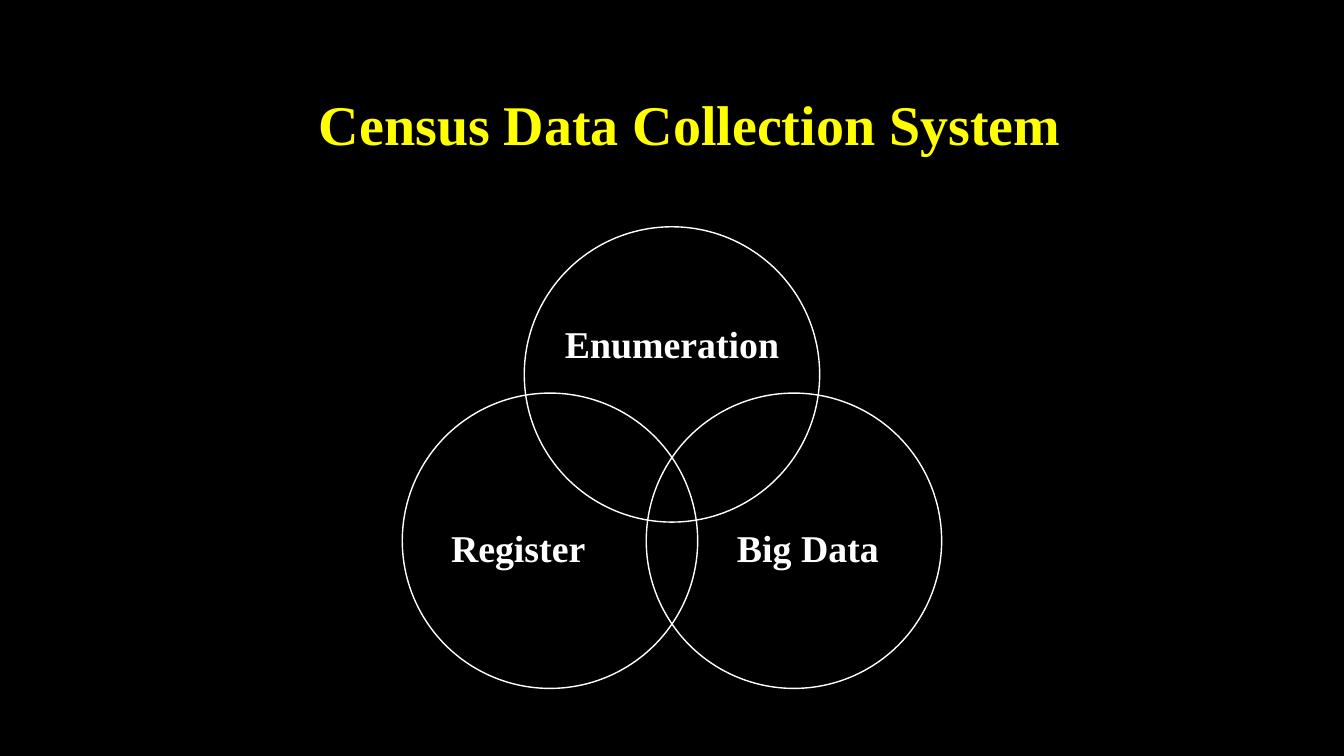
from dataclasses import dataclass

import pptx
import pptx.dml.color
import pptx.enum.shapes
import pptx.enum.text
import pptx.slide
import pptx.util

Inches = pptx.util.Inches
Align = pptx.enum.text.PP_ALIGN


@dataclass(frozen=True)
class Theme:
    font: str = "Times New Roman"
    background: str = "000000"
    title_color: str = "FFFF00"
    foreground: str = "FFFFFF"
    title_size: float = 40
    label_size: float = 27
    outline_width: float = 1


@dataclass(frozen=True)
class Box:
    left: float
    top: float
    width: float
    height: float

    def lengths(self) -> tuple[int, int, int, int]:
        return (Inches(self.left), Inches(self.top),
                Inches(self.width), Inches(self.height))


@dataclass(frozen=True)
class Label:
    text: str
    box: Box
    size: float
    color: str
    align: Align = Align.CENTER
    margin: float = 0
    line_spacing: float = 0.9


@dataclass(frozen=True)
class DataSource:
    circle_left: float
    circle_top: float
    label: Label


THEME = Theme()
DIAMETER = 2.93
CENTER_LEFT = 5.2
SIDE_OFFSET = 1.21
TOP_ROW = 2.25
BOTTOM_ROW = 3.9

TITLE = Label("Census Data Collection System", Box(2.34, 0.6, 9, 1.25),
              THEME.title_size, THEME.title_color, margin=0.1, line_spacing=1)


def source_label(text: str, box: Box, align: Align = Align.CENTER) -> Label:
    return Label(text, box, THEME.label_size, THEME.foreground, align)


SOURCES = [
    DataSource(CENTER_LEFT, TOP_ROW,
               source_label("Enumeration", Box(5.59, 2.77, 2.15, 1.32))),
    DataSource(CENTER_LEFT + SIDE_OFFSET, BOTTOM_ROW,
               source_label("Big Data", Box(7.31, 4.65, 1.76, 1.61), Align.LEFT)),
    DataSource(CENTER_LEFT - SIDE_OFFSET, BOTTOM_ROW,
               source_label("Register", Box(4.26, 4.65, 1.76, 1.61))),
]


def rgb(value: str) -> pptx.dml.color.RGBColor:
    return pptx.dml.color.RGBColor.from_string(value)


def draw_label(slide: pptx.slide.Slide, label: Label) -> None:
    frame = slide.shapes.add_textbox(*label.box.lengths()).text_frame
    frame.word_wrap = True
    frame.vertical_anchor = pptx.enum.text.MSO_ANCHOR.MIDDLE
    frame.margin_left = frame.margin_right = Inches(label.margin)
    frame.margin_top = frame.margin_bottom = Inches(label.margin / 2)
    paragraph = frame.paragraphs[0]
    paragraph.alignment = label.align
    paragraph.line_spacing = label.line_spacing
    run = paragraph.add_run()
    run.text = label.text
    run.font.name = THEME.font
    run.font.size = pptx.util.Pt(label.size)
    run.font.bold = True
    run.font.color.rgb = rgb(label.color)


def draw_source(slide: pptx.slide.Slide, source: DataSource) -> None:
    box = Box(source.circle_left, source.circle_top, DIAMETER, DIAMETER)
    circle = slide.shapes.add_shape(
        pptx.enum.shapes.MSO_SHAPE.OVAL, *box.lengths())
    circle.shadow.inherit = False
    circle.fill.background()
    circle.line.color.rgb = rgb(THEME.foreground)
    circle.line.width = pptx.util.Pt(THEME.outline_width)
    draw_label(slide, source.label)


def main() -> None:
    presentation = pptx.Presentation()
    presentation.slide_width = Inches(13.33)
    presentation.slide_height = Inches(7.5)
    slide = presentation.slides.add_slide(presentation.slide_layouts[6])
    slide.background.fill.solid()
    slide.background.fill.fore_color.rgb = rgb(THEME.background)
    draw_label(slide, TITLE)
    for source in SOURCES:
        draw_source(slide, source)
    presentation.save("out.pptx")


if __name__ == "__main__":
    main()
